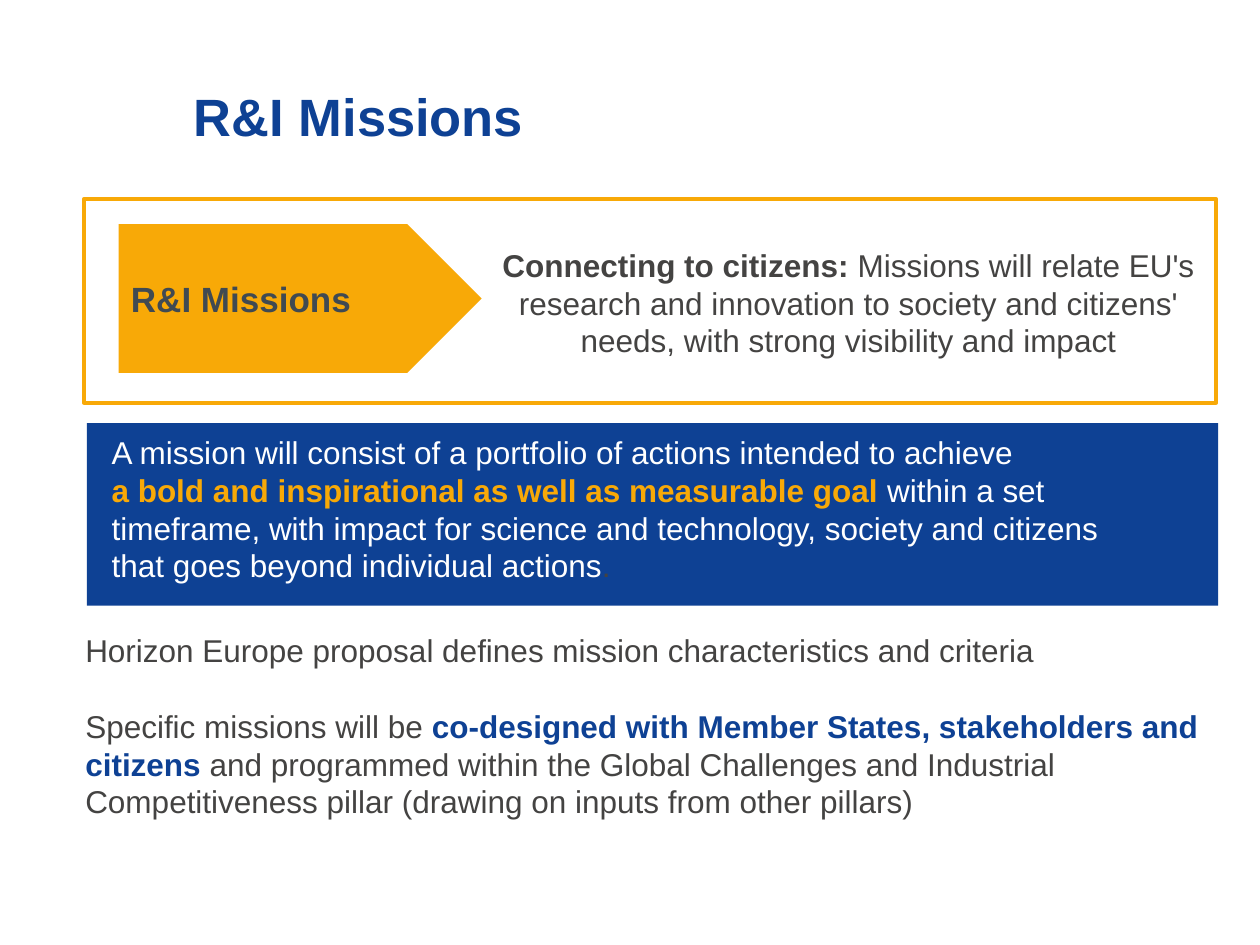
"""Build the R&I Missions slide."""
from pptx import Presentation
from pptx.dml.color import RGBColor
from pptx.enum.shapes import MSO_SHAPE as Preset
from pptx.enum.text import MSO_ANCHOR as Anchor, PP_ALIGN as Align
from pptx.util import Cm, Pt

COLORS = {"blue": "0E4194", "orange": "F8A907", "white": "FFFFFF",
          "text": "444342", "slate": "404A52"}

TITLE = [[("R&I Missions", "blue", True)]]
ARROW_LABEL = [[("R&I Missions", "slate", True)]]
CITIZENS = [[
    ("Connecting to citizens: ", "text", True),
    ("Missions will relate EU's research and innovation to society and "
     "citizens' needs, with strong visibility and impact", "text", False),
]]
DETAILS = [
    [("Horizon Europe proposal defines mission characteristics and criteria",
      "text", False)],
    [("Specific missions will be ", "text", False),
     ("co-designed with Member States, stakeholders and citizens ", "blue", True),
     ("and programmed within the Global Challenges and Industrial "
      "Competitiveness pillar (drawing on inputs from other pillars)",
      "text", False)],
]
DEFINITION = [[
    ("A mission will consist of a portfolio of actions intended to achieve\v",
     "white", False),
    ("a bold and inspirational as well as measurable goal ", "orange", True),
    ("within a set timeframe, with impact for science and technology, society "
     "and citizens\vthat goes beyond individual actions", "white", False),
    (".", "text", False),
]]


def color(name):
    return RGBColor.from_string(COLORS[name])


def add_block(slide, box, preset=None, fill=None, line=None):
    lengths = [Cm(value) for value in box]
    if preset is None:
        return slide.shapes.add_textbox(*lengths)
    shape = slide.shapes.add_shape(preset, *lengths)
    shape.shadow.inherit = False
    shape.fill.solid()
    shape.fill.fore_color.rgb = color(fill)
    if line:
        shape.line.color.rgb = color(line)
        shape.line.width = Pt(2.5)
    else:
        shape.line.fill.background()
    return shape


def write(shape, paragraphs, size=18, anchor=Anchor.TOP, align=Align.LEFT,
          gap=0, margins=(0.25, 0.13, 0.25, 0.13)):
    frame = shape.text_frame
    frame.word_wrap = True
    frame.vertical_anchor = anchor
    (frame.margin_left, frame.margin_top,
     frame.margin_right, frame.margin_bottom) = [Cm(m) for m in margins]
    for index, runs in enumerate(paragraphs):
        paragraph = frame.add_paragraph() if index else frame.paragraphs[0]
        paragraph.alignment = align
        paragraph.space_before = Pt(gap if index else 0)
        paragraph.font.name = "Arial"
        paragraph.font.size = Pt(size)
        for text, run_color, bold in runs:
            for part_index, part in enumerate(text.split("\v")):
                if part_index:
                    paragraph.add_line_break()
                if part:
                    run = paragraph.add_run()
                    run.text = part
                    run.font.bold = bold
                    run.font.color.rgb = color(run_color)


def main():
    presentation = Presentation()
    presentation.slide_width, presentation.slide_height = Cm(25.4), Cm(19.05)
    slide = presentation.slides.add_slide(presentation.slide_layouts[6])

    write(add_block(slide, (3.66, 1.57, 21.6, 2.01)), TITLE, size=30)
    add_block(slide, (1.7, 4.01, 22.81, 4.11), Preset.RECTANGLE, "white", "orange")
    arrow = add_block(slide, (2.39, 4.52, 7.32, 3), Preset.PENTAGON, "orange")
    write(arrow, ARROW_LABEL, size=20, anchor=Anchor.MIDDLE)
    write(add_block(slide, (9.7, 4.6, 14.81, 3)), CITIZENS,
          anchor=Anchor.MIDDLE, align=Align.CENTER)
    write(add_block(slide, (1.47, 12.6, 23.01, 4.85)), DETAILS, gap=21.5)
    panel = add_block(slide, (1.75, 8.53, 22.81, 3.68), Preset.RECTANGLE, "blue")
    write(panel, DEFINITION, margins=(0.5, 0.2, 0.8, 0.13))

    presentation.save("out.pptx")


if __name__ == "__main__":
    main()
